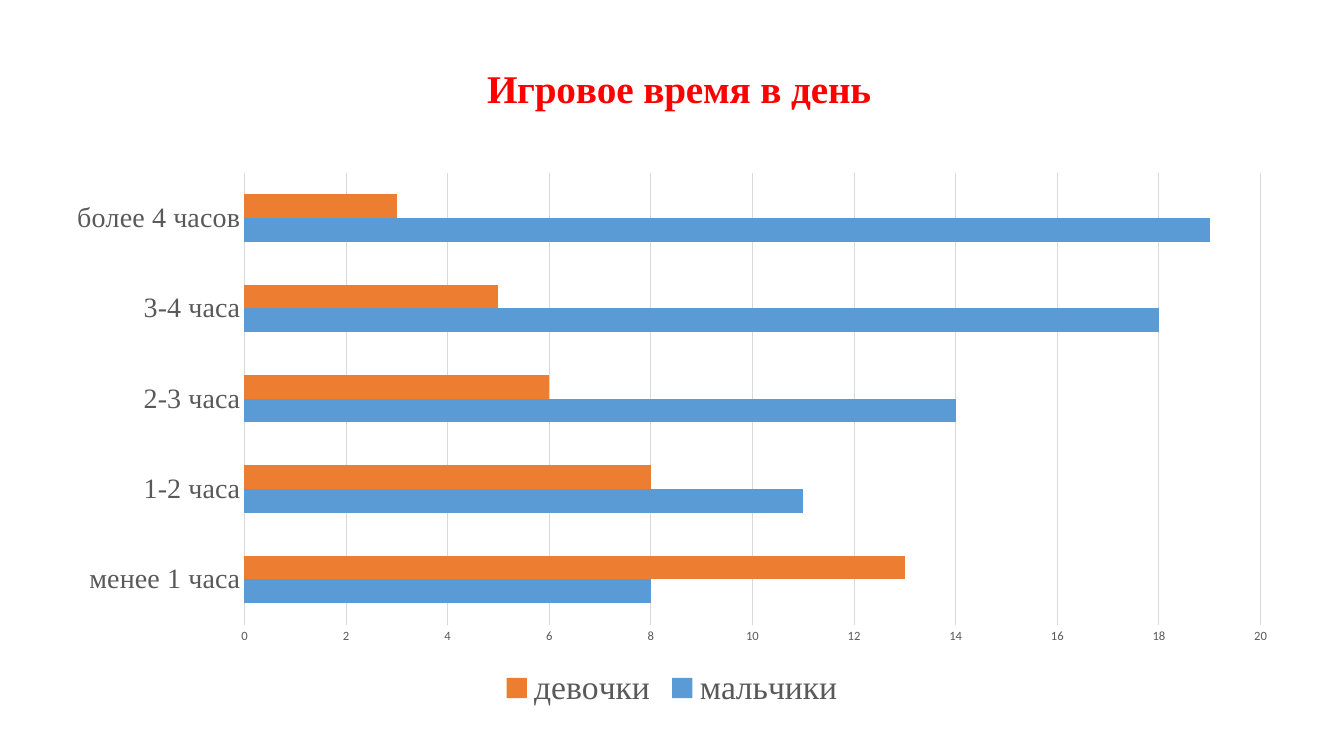
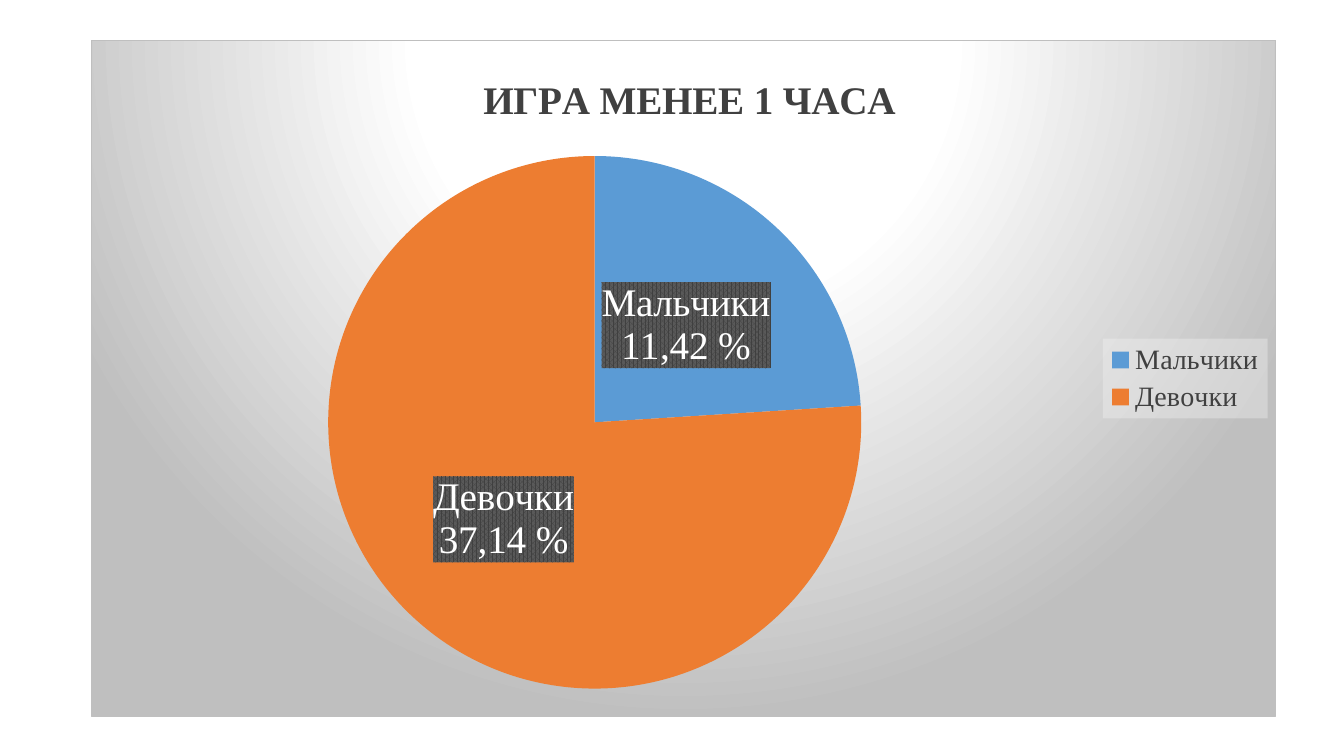
from pptx import Presentation, util as u
from pptx.chart.data import CategoryChartData
from pptx.dml.color import RGBColor
from pptx.enum import chart as ch
from pptx.oxml import parse_xml
from pptx.oxml.ns import nsdecls, qn

SERIF, SANS = "Times New Roman", "Calibri"
BLUE, ORANGE = "5B9BD5", "ED7D31"
RED, WHITE, DARK, GREY, RULE = "FF0000", "FFFFFF", "404040", "595959", "D9D9D9"


def rgb(value):
    """Turn a hex string into a colour."""
    return RGBColor.from_string(value)


def clr(value, extra=""):
    """Give the XML of a colour."""
    return f'<a:srgbClr val="{value}">{extra}</a:srgbClr>'


def add_sppr(prev, inner):
    """Put shape properties right after a chart element."""
    prev.addnext(parse_xml(f'<c:spPr {nsdecls("c", "a")}>{inner}</c:spPr>'))


def make_layout(x, y, w=None, h=None):
    """Build a manual layout from fractions of the chart."""
    inner = '<c:layoutTarget val="inner"/>' if w else ""
    inner += '<c:xMode val="edge"/><c:yMode val="edge"/>'
    for tag, value in zip("xywh", (x, y, w, h)):
        if value is not None:
            inner += f'<c:{tag} val="{value}"/>'
    return parse_xml(f'<c:layout {nsdecls("c")}><c:manualLayout>{inner}'
                     '</c:manualLayout></c:layout>')


class Deck:
    """Holds the style and the current slide."""

    def __init__(self):
        """Start an empty widescreen deck."""
        self.prs = Presentation()
        self.prs.slide_width, self.prs.slide_height = u.Inches(13.33), u.Inches(7.5)

    def slide(self):
        """Add a blank slide."""
        self.s = self.prs.slides.add_slide(self.prs.slide_layouts[6])

    def font(self, font, size, color, name=SERIF, bold=False):
        """Format a font."""
        font.size, font.name, font.bold = u.Pt(size), name, bold
        font.color.rgb = rgb(color)

    def chart(self, kind, box, cats, series, plot_area):
        """Add a chart with a fixed plot area."""
        data = CategoryChartData()
        data.categories = cats
        for name, values in series:
            data.add_series(name, values)
        chart = self.s.shapes.add_chart(kind, *map(u.Inches, box), data).chart
        self.font(chart.font, 10, "000000", SANS)
        space = chart._chartSpace
        if space.find(qn("c:roundedCorners")) is None:
            space.find(qn("c:chart")).addprevious(
                parse_xml(f'<c:roundedCorners {nsdecls("c")} val="0"/>'))
        area = space.find(".//" + qn("c:plotArea"))
        for old in area.findall(qn("c:layout")):
            area.remove(old)
        area.insert(0, make_layout(*plot_area))
        return chart

    def title(self, chart, words, color, x, y):
        """Set the chart title and its place."""
        chart.has_title = True
        title = chart.chart_title
        tf = title.text_frame
        tf.text = words
        self.font(tf.paragraphs[0].runs[0].font, 28, color, bold=True)
        el = title._element
        for old in el.findall(qn("c:layout")):
            el.remove(old)
        el.find(qn("c:tx")).addnext(make_layout(x, y))

    def legend(self, chart, position, size, color):
        """Show the legend beside the plot."""
        chart.has_legend = True
        chart.legend.position = position
        chart.legend.include_in_layout = False
        self.font(chart.legend.font, size, color)

    def axis(self, axis, size, name=SERIF):
        """Style an axis without tick marks."""
        axis.major_tick_mark = axis.minor_tick_mark = ch.XL_TICK_MARK.NONE
        self.font(axis.tick_labels.font, size, GREY, name)

    def rule(self, line):
        """Draw a thin pale line."""
        line.color.rgb = rgb(RULE)
        line.width = u.Pt(0.75)

    def fill(self, part, color):
        """Fill a series or a point."""
        part.format.fill.solid()
        part.format.fill.fore_color.rgb = rgb(color)

    def label(self, point, words):
        """Label a pie slice on a dark pattern."""
        label = point.data_label
        label.text_frame.text = words
        for p in label.text_frame.paragraphs:
            self.font(p.runs[0].font, 28, WHITE)
        label.position = ch.XL_LABEL_POSITION.CENTER
        add_sppr(label._dLbl.find(qn("c:tx")),
                 f'<a:pattFill prst="pct75"><a:fgClr>{clr(DARK)}</a:fgClr>'
                 f'<a:bgClr>{clr(GREY)}</a:bgClr></a:pattFill>')

    def backdrop(self, chart):
        """Give the chart a radial backdrop and its legend a veil."""
        stops = "".join(f'<a:gs pos="{pos}000">{clr(color)}</a:gs>'
                        for pos, color in ((0, WHITE), (39, WHITE), (100, "BFBFBF")))
        add_sppr(chart._chartSpace.find(qn("c:chart")),
                 f'<a:gradFill><a:gsLst>{stops}</a:gsLst><a:path path="circle">'
                 '<a:fillToRect l="50000" t="-80000" r="50000" b="180000"/></a:path>'
                 f'</a:gradFill><a:ln w="9525"><a:solidFill>{clr("BFBFBF")}'
                 '</a:solidFill></a:ln>')
        veil = clr("F2F2F2", '<a:alpha val="39000"/>')
        add_sppr(chart.legend._element.find(qn("c:overlay")),
                 f"<a:solidFill>{veil}</a:solidFill>")


def play_time(deck):
    """Build the bar chart of daily play time."""
    deck.slide()
    chart = deck.chart(
        ch.XL_CHART_TYPE.BAR_CLUSTERED, (0.52, 0.29, 12.29, 6.79),
        ["менее 1 часа", "1-2 часа", "2-3 часа", "3-4 часа", "более 4 часов"],
        [("мальчики", (8, 11, 14, 18, 19)), ("девочки", (13, 8, 6, 5, 3))],
        (0.155, 0.21, 0.82, 0.66))
    deck.title(chart, "Игровое время в день", RED, 0.345, 0.04)
    deck.legend(chart, ch.XL_LEGEND_POSITION.BOTTOM, 24, GREY)
    plot = chart.plots[0]
    plot.gap_width, plot.vary_by_categories = 182, False
    for series, color in zip(plot.series, (BLUE, ORANGE)):
        deck.fill(series, color)
    deck.axis(chart.category_axis, 20)
    deck.rule(chart.category_axis.format.line)
    values = chart.value_axis
    deck.axis(values, 9, SANS)
    values.minimum_scale, values.maximum_scale, values.major_unit = 0, 20, 2
    values.format.line.fill.background()
    deck.rule(values.major_gridlines.format.line)


def short_play(deck):
    """Build the pie chart of play under one hour."""
    deck.slide()
    cats = ["Мальчики", "Девочки"]
    chart = deck.chart(ch.XL_CHART_TYPE.PIE, (0.9, 0.4, 11.76, 6.71), cats,
                       [("Series 1", (24, 76))], (0.2, 0.17, 0.45, 0.79))
    deck.title(chart, "ИГРА МЕНЕЕ 1 ЧАСА", DARK, 0.325, 0.04)
    deck.legend(chart, ch.XL_LEGEND_POSITION.RIGHT, 20, DARK)
    deck.backdrop(chart)
    points = chart.plots[0].series[0].points
    for i, (color, share) in enumerate(((BLUE, "11,42 %"), (ORANGE, "37,14 %"))):
        deck.fill(points[i], color)
        deck.label(points[i], f"{cats[i]}\n{share}")


def main():
    """Build and save the deck."""
    deck = Deck()
    play_time(deck)
    short_play(deck)
    deck.prs.save("out.pptx")


if __name__ == "__main__":
    main()
